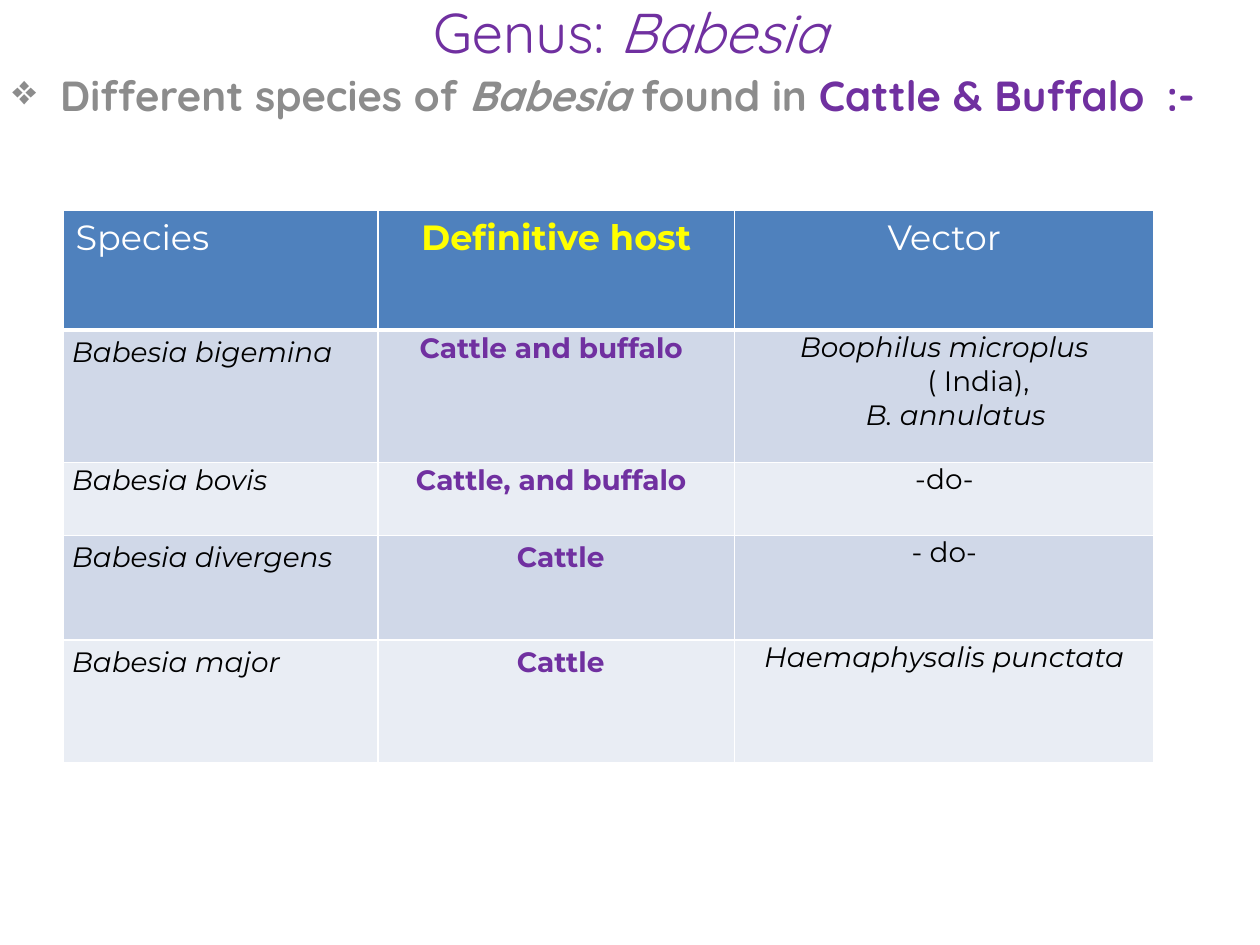
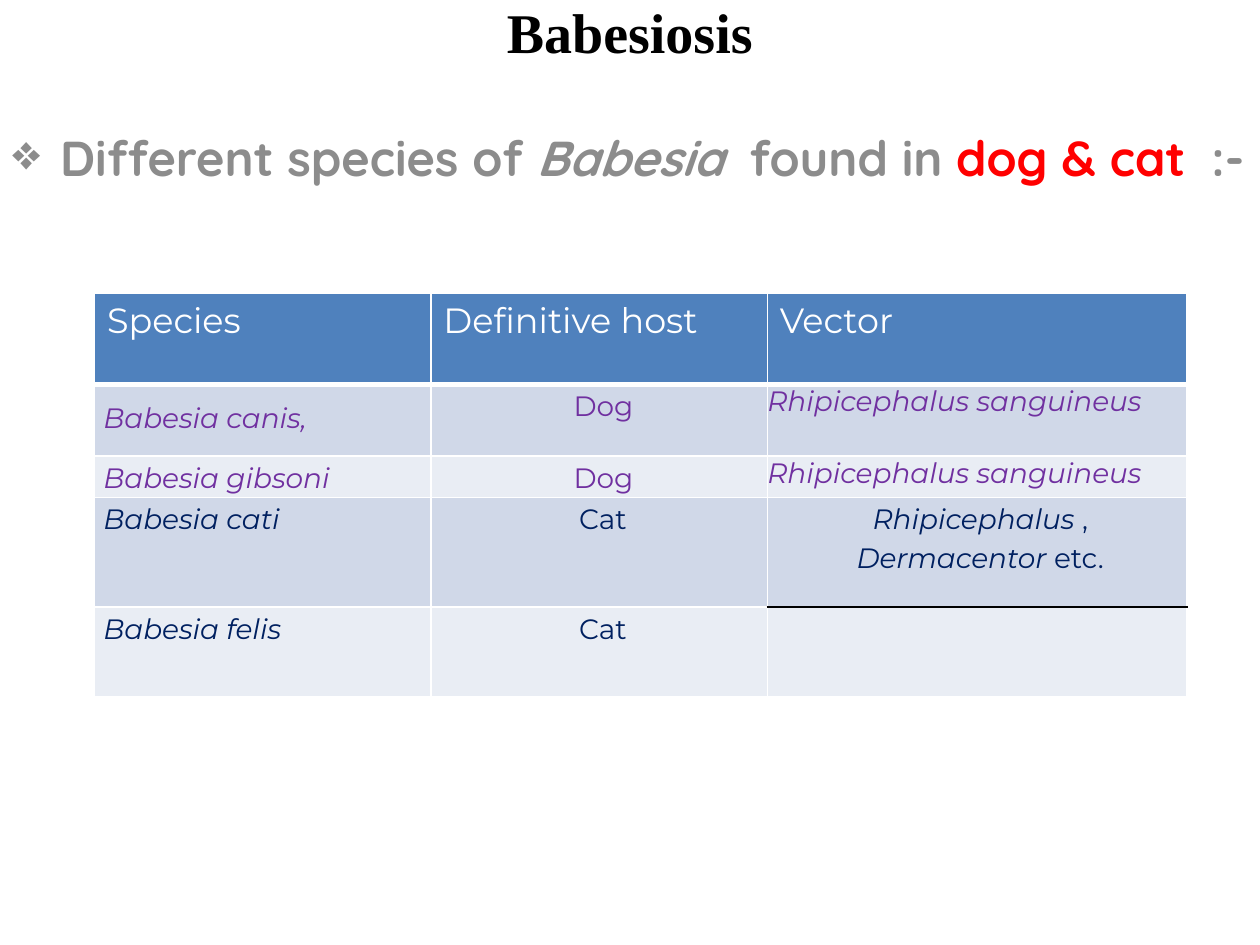
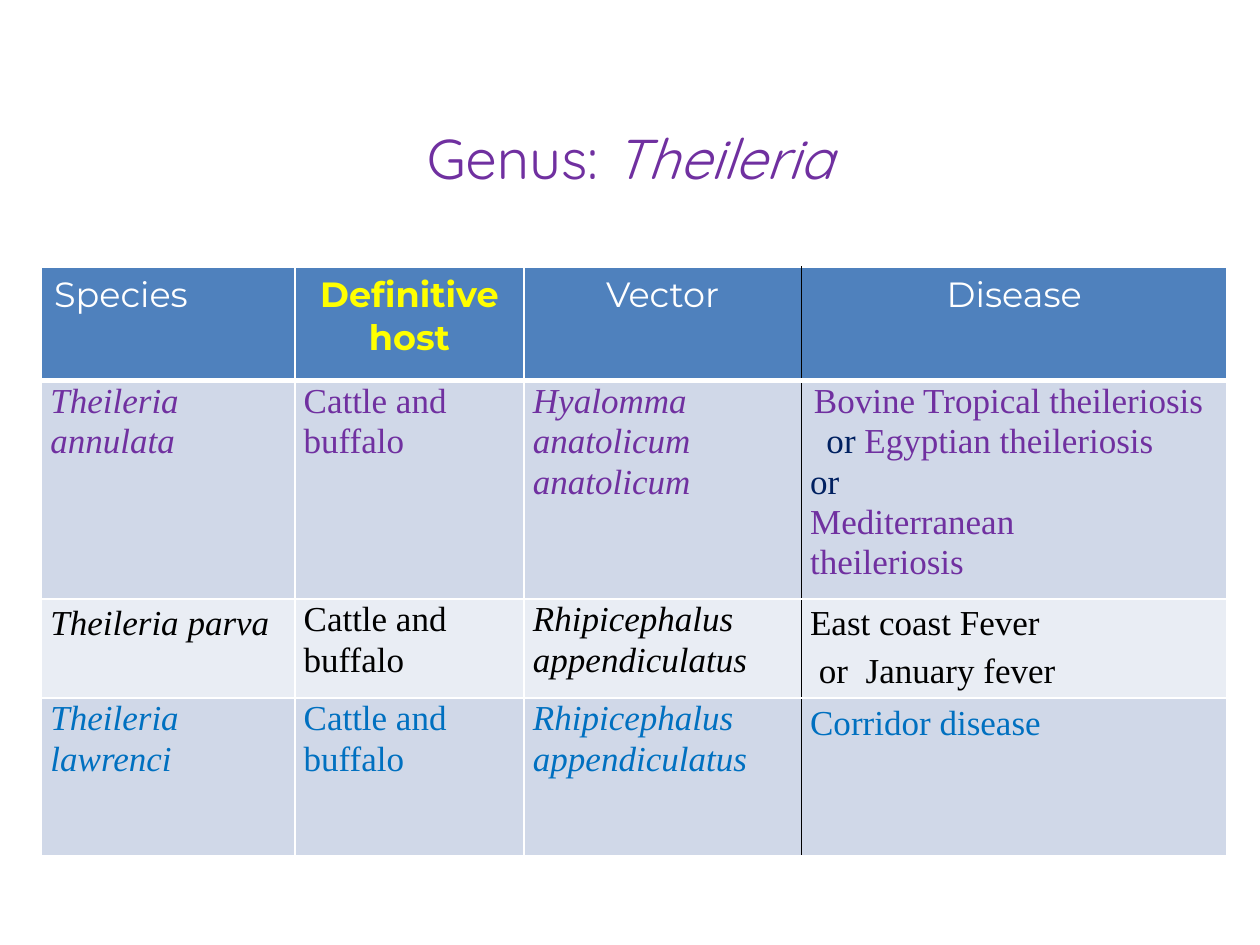
from lxml import etree
from pptx import Presentation
from pptx.dml.color import RGBColor
from pptx.enum.text import MSO_ANCHOR, PP_ALIGN
from pptx.oxml.ns import qn
from pptx.util import Inches, Pt

MID, LEFT, JUST = PP_ALIGN.CENTER, PP_ALIGN.LEFT, PP_ALIGN.JUSTIFY
CENTER = MSO_ANCHOR.MIDDLE


class Theme:
    white, black, grey = "FFFFFF", "000000", "8C8C8C"
    purple, navy, sky = "7030A0", "002060", "0070C0"
    red, yellow = "FF0000", "FFFF00"
    head, bands = "4F81BD", ("D0D8E8", "E9EDF4")
    sans, round, serif = "Montserrat", "Quicksand", "Times New Roman"
    title, big, lead, label, body = 32, 28, 24, 20, 16


T = Theme


def write(frame, lines, base):
    """Fill a frame; a line is (runs, format), underscores switch italics."""
    for num, (runs, form) in enumerate(lines):
        form = {**base, **form}
        para = frame.paragraphs[0] if num == 0 else frame.add_paragraph()
        props = para._p.get_or_add_pPr()
        for key, name in (("left", "marL"), ("right", "marR"), ("hang", "indent")):
            if key in form:
                props.set(name, str(Inches(form[key])))
        if "bullet" in form:
            etree.SubElement(props, qn("a:buChar")).set("char", form["bullet"])
        para.alignment = form.get("align", LEFT)
        para.line_spacing = form.get("ls", 1.0)
        para.space_before = Pt(form.get("before", 0))
        for text, extra in [(runs, {})] if isinstance(runs, str) else runs:
            look = {**form, **extra}
            for turn, part in enumerate(text.split("_")):
                if not part:
                    continue
                run = para.add_run()
                run.text = part
                values = {"name": look["name"], "size": Pt(look["size"]),
                          "bold": look.get("bold", False), "italic": turn % 2 == 1}
                for key, value in values.items():
                    setattr(run.font, key, value)
                run.font.color.rgb = RGBColor.from_string(look["color"])
                if "gap" in look:
                    run._r.get_or_add_rPr().set("spc", str(look["gap"] * 100))


def edge(cell, side, color, width):
    """Draw one border of a table cell."""
    line = etree.SubElement(cell._tc.get_or_add_tcPr(), qn("a:ln" + side))
    line.set("w", str(Pt(width)))
    paint = etree.SubElement(line, qn("a:solidFill"))
    etree.SubElement(paint, qn("a:srgbClr")).set("val", color)


# Shared formats
genus = {"name": T.round, "size": T.title, "color": T.purple, "align": MID}
sick = {**genus, "name": T.serif, "color": T.black, "bold": True}
lead = {"name": T.round, "size": T.lead, "color": T.grey, "bold": True,
        "align": JUST, "left": 0.38, "hang": -0.38, "bullet": "❖"}
top = {"name": T.sans, "size": T.label, "color": T.white}
mid = {"align": MID}
host = {"align": MID, "color": T.yellow, "bold": True}
cell16 = {"name": T.sans, "size": T.body, "color": T.black}
cell20 = {"name": T.serif, "size": T.label, "color": T.black, "left": 0.07, "ls": 1.04}
name = {"left": 0.07, "ls": 1.15}
beast = {**name, "align": MID, "color": T.purple, "bold": True}
pair = {**beast, "ls": 1.04, "right": 0.15}
lilac, blue, cyan = ({"color": c} for c in (T.purple, T.navy, T.sky))
dog = {**name, **mid, **lilac}
cat = {**name, **mid, **blue, "left": 0.16, "right": 0.1}
wide = {"ls": 1.15}
cows = "Cattle and buffalo"
brown = "_Rhipicephalus sanguineus_"
ear = "_Rhipicephalus appendiculatus_"

# Slide contents: every cell is a list of lines
slides = [
    {"title": ("Genus: _Babesia_", genus), "top": 0,
     "lead": ([("Different species of _Babesia _found in ", {}),
               ("Cattle & Buffalo", lilac), (" ", {"gap": 6}), (":-", lilac)], lead),
     "at": (0.5, 1.67), "cols": (2.5, 2.83, 3.33),
     "rows": (0.95, 1.05, 0.58, 0.83, 0.97), "base": cell16, "dark": [],
     "cells": [
         [[("Species", {})], [("Definitive host", host)], [("Vector", mid)]],
         [[("_Babesia bigemina_", name)], [(cows, pair)],
          [("_Boophilus microplus_", mid), ("( India),", {**mid, "left": 0.54}),
           ("_B. annulatus_", {**mid, "left": 0.18})]],
         [[("_Babesia bovis_", {**name, "ls": 1.04})],
          [("Cattle, and buffalo", pair)], [("-do-", mid)]],
         [[("_Babesia divergens_", name)], [("Cattle", beast)], [("- do-", mid)]],
         [[("_Babesia major_", name)], [("Cattle", beast)],
          [("_Haemaphysalis punctata_", mid)]],
     ]},
    {"title": ("Babesiosis", sick), "top": 0,
     "lead": ([("Different species of _Babesia_", {}), (" ", {"gap": 7}),
               ("found in ", {}), ("dog & cat", {"color": T.red}),
               (" ", {"gap": 7}), (":-", {})], {**lead, "size": T.big, "ls": 2.0}),
     "at": (0.75, 2.33), "cols": (2.67, 2.67, 3.33),
     "rows": (0.72, 0.57, 0.33, 0.87, 0.71), "base": cell16,
     "dark": [(3, 2, "B"), (4, 2, "T")],
     "cells": [
         [[("Species", {})], [("Definitive host", {})], [("Vector", {})]],
         [[("_Babesia canis,_", {**name, **lilac, "ls": 1.5})], [("Dog", dog)],
          [(brown, lilac)]],
         [[("_Babesia gibsoni_", {**name, **lilac})], [("Dog", dog)], [(brown, lilac)]],
         [[("_Babesia cati_", {**name, **blue})], [("Cat", cat)],
          [("_Rhipicephalus _, _Dermacentor _etc.",
            {**cat, "left": 0.36, "right": 0.31})]],
         [[("_Babesia felis_", {**name, **blue})], [("Cat", cat)], []],
     ]},
    {"title": ("Genus: _Theileria_", genus), "top": 1, "lead": None,
     "at": (0.33, 2.12), "cols": (2.01, 1.82, 2.2, 3.38),
     "rows": (0.9, 1.43, 0.62, 1.25), "base": cell20,
     "dark": [(r, c, s) for r in range(4) for c, s in ((2, "R"), (3, "L"))],
     "cells": [
         [[("Species", {})], [("Definitive host", host)], [("Vector", mid)],
          [("Disease", mid)]],
         [[("_Theileria annulata_", lilac)], [(cows, lilac)],
          [("_Hyalomma anatolicum anatolicum_", lilac)],
          [("Bovine Tropical theileriosis", {**lilac, "left": 0.1}),
           ([("or ", blue), ("Egyptian theileriosis", lilac)], {"left": 0.2}),
           ("or", blue),
           ("Mediterranean theileriosis", {**lilac, "right": 0.6})]],
         [[("_Theileria parva_", wide)], [(cows, {})], [(ear, {})],
          [("East coast Fever", wide),
           ([("or", {}), (" ", {"gap": 5}), ("January fever", {})],
            {**wide, "left": 0.14, "before": 1.4})]],
         [[("_Theileria lawrenci_", cyan)], [(cows, cyan)], [(ear, cyan)],
          [("Corridor disease", {**cyan, **wide})]],
     ]},
]

deck = Presentation()
deck.slide_width, deck.slide_height = Inches(10), Inches(7.5)

for page in slides:
    slide = deck.slides.add_slide(deck.slide_layouts[6])

    # Title and lead line
    boxes = [(page["title"], page["top"], 0.5, CENTER)]
    if page["lead"]:
        boxes.append((page["lead"], 0.5, 7, MSO_ANCHOR.TOP))
    for (text, form), y, high, anchor in boxes:
        box = slide.shapes.add_textbox(0, Inches(y), Inches(10), Inches(high))
        frame = box.text_frame
        frame.word_wrap, frame.vertical_anchor = True, anchor
        if page["lead"] and text is page["lead"][0]:
            frame.margin_right = 0
        write(frame, [(text, {})], form)

    # Table grid
    cols, rows = page["cols"], page["rows"]
    x, y = page["at"]
    grid = slide.shapes.add_table(len(rows), len(cols), Inches(x), Inches(y),
                                  Inches(sum(cols)), Inches(sum(rows))).table
    for col, size in zip(grid.columns, cols):
        col.width = Inches(size)
    for row, size in zip(grid.rows, rows):
        row.height = Inches(size)

    # Cells: header row first, then banded rows
    for r, line in enumerate(page["cells"]):
        for c, lines in enumerate(line):
            cell = grid.cell(r, c)
            for side in "LRTB":
                dark = (r, c, side) in page["dark"]
                edge(cell, side, T.black if dark else T.white,
                     3 if r == 0 and side == "B" else 1)
            cell.fill.solid()
            shade = T.bands[(r - 1) % 2] if r else T.head
            cell.fill.fore_color.rgb = RGBColor.from_string(shade)
            if r and lines:
                for key in ("left", "right", "top", "bottom"):
                    setattr(cell, "margin_" + key, 0)
            write(cell.text_frame, lines, page["base"] if r else top)

deck.save("out.pptx")
